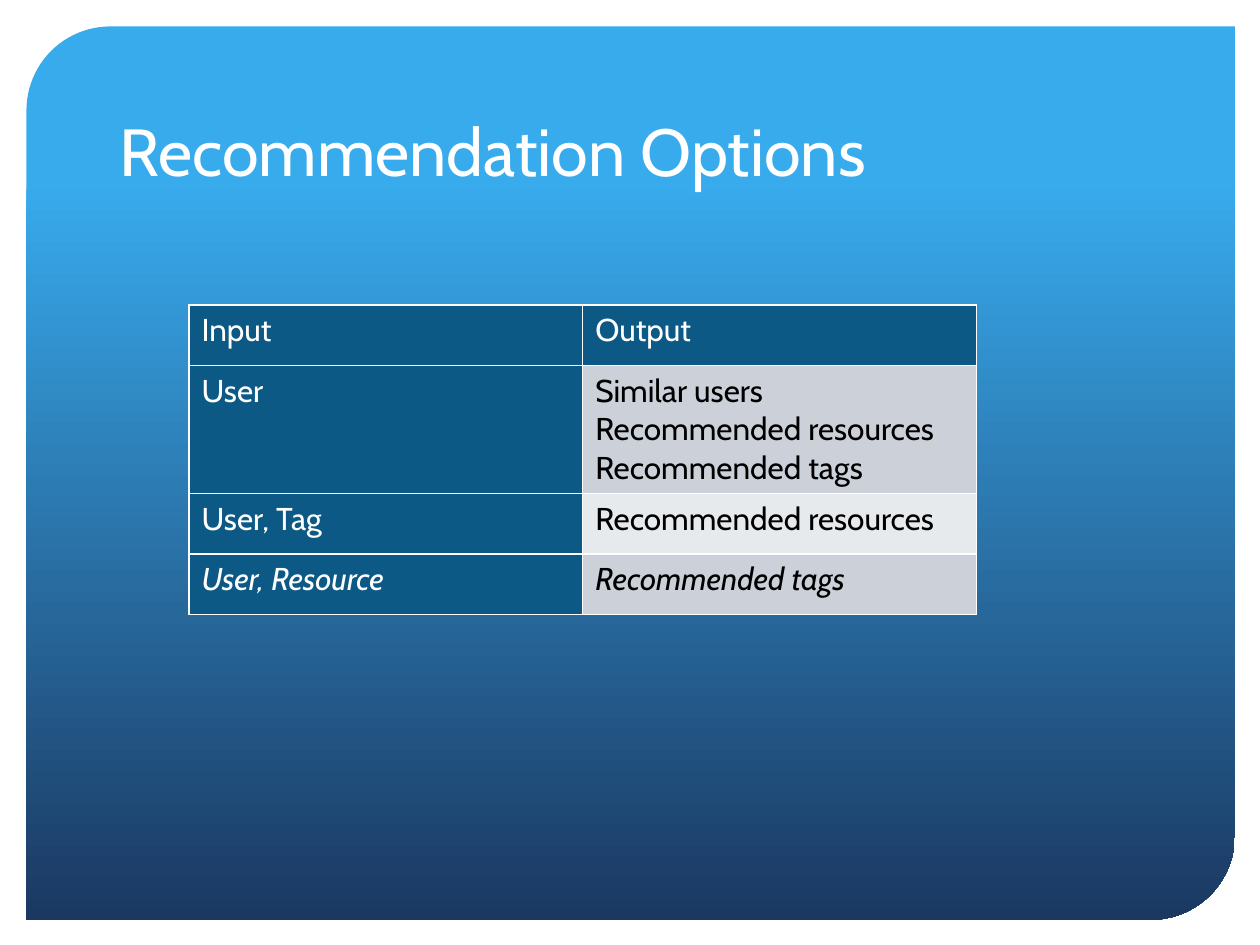
from dataclasses import dataclass

import pptx
import pptx.dml.color
import pptx.enum.shapes
import pptx.enum.text
import pptx.oxml
import pptx.oxml.ns
import pptx.util

Inches = pptx.util.Inches


@dataclass(frozen=True)
class Theme:
    """Colours, type sizes and font of the slide."""
    font: str = "Cabin"
    title_size: int = 38
    table_size: int = 18
    white: str = "FFFFFF"
    black: str = "000000"
    sky: str = "38ABED"
    navy: str = "1B3861"
    heading: str = "0C5986"
    bands: tuple = ("CCD1D9", "E7EAED")


THEME = Theme()
OPTIONS = [
    ("Input", ["Output"]),
    ("User", ["Similar users", "Recommended resources", "Recommended tags"]),
    ("User, Tag", ["Recommended resources"]),
    ("User, Resource", ["Recommended tags"]),
]
ROW_HEIGHTS = [0.48, 0.91, 0.48, 0.48]


def rgb(value):
    """Turn a hex string into a colour."""
    return pptx.dml.color.RGBColor.from_string(value)


def write(frame, lines, size, color, italic=False):
    """Fill a text frame with one left-aligned paragraph per line."""
    for number, line in enumerate(lines):
        paragraph = frame.add_paragraph() if number else frame.paragraphs[0]
        paragraph.alignment = pptx.enum.text.PP_ALIGN.LEFT
        run = paragraph.add_run()
        run.text = line
        run.font.name = THEME.font
        run.font.size = pptx.util.Pt(size)
        run.font.color.rgb = rgb(color)
        run.font.bold = False
        run.font.italic = italic


def add_panel(slide, left, top, width, height):
    """Draw the gradient panel behind the title."""
    panel = slide.shapes.add_shape(
        pptx.enum.shapes.MSO_SHAPE.ROUND_2_DIAG_RECTANGLE, left, top, width, height)
    panel.adjustments[0], panel.adjustments[1] = 0.094, 0
    panel.shadow.inherit = False
    panel.line.fill.background()
    panel.fill.gradient()
    panel.fill.gradient_angle = 270
    stops = [(0.17, THEME.sky), (1, THEME.navy)]
    for stop, (position, color) in zip(panel.fill.gradient_stops, stops):
        stop.position = position
        stop.color.rgb = rgb(color)
    slide.shapes.title.element.addprevious(panel.element)


def place_title(slide, text, left, top, width, height):
    """Move and format the title placeholder."""
    title = slide.shapes.title
    title.left, title.top, title.width, title.height = left, top, width, height
    frame = title.text_frame
    frame.auto_size = pptx.enum.text.MSO_AUTO_SIZE.NONE
    frame.vertical_anchor = pptx.enum.text.MSO_ANCHOR.BOTTOM
    write(frame, [text], size=THEME.title_size, color=THEME.white)


def format_cell(cell, lines, fill, color, italic):
    """Give a cell its borders, fill and text."""
    properties = cell._tc.get_or_add_tcPr()
    for side in "LRTB":
        properties.append(pptx.oxml.parse_xml(
            f'<a:ln{side} {pptx.oxml.ns.nsdecls("a")} w="{pptx.util.Pt(1)}"><a:solidFill>'
            f'<a:srgbClr val="{THEME.white}"/></a:solidFill></a:ln{side}>'))
    cell.fill.solid()
    cell.fill.fore_color.rgb = rgb(fill)
    write(cell.text_frame, lines, size=THEME.table_size, color=color, italic=italic)


def add_options_table(slide, left, top, width, height):
    """Build the table of inputs and their recommended outputs."""
    table = slide.shapes.add_table(len(OPTIONS), 2, left, top, width, height).table
    table.first_row = table.horz_banding = False
    for row, row_height in zip(table.rows, ROW_HEIGHTS):
        row.height = Inches(row_height)
    for index, (source, outputs) in enumerate(OPTIONS):
        italic = source == "User, Resource"
        if index == 0:
            output_fill, output_color = THEME.heading, THEME.white
        else:
            output_fill, output_color = THEME.bands[(index - 1) % 2], THEME.black
        format_cell(table.cell(index, 0), [source], THEME.heading, THEME.white, italic)
        format_cell(table.cell(index, 1), outputs, output_fill, output_color, italic)


def main():
    """Build and save the slide."""
    deck = pptx.Presentation()
    deck.slide_width, deck.slide_height = Inches(10), Inches(7.5)
    slide = deck.slides.add_slide(deck.slide_layouts[5])
    slide.background.fill.solid()
    slide.background.fill.fore_color.rgb = rgb(THEME.white)
    add_panel(slide, Inches(0.21), Inches(0.21), Inches(9.59), Inches(7.09))
    place_title(slide, "Recommendation Options",
                Inches(0.85), Inches(0.42), Inches(8.29), Inches(1.14))
    add_options_table(slide, Inches(1.5), Inches(2.42),
                      Inches(6.25), Inches(sum(ROW_HEIGHTS)))
    deck.save("out.pptx")


if __name__ == "__main__":
    main()
